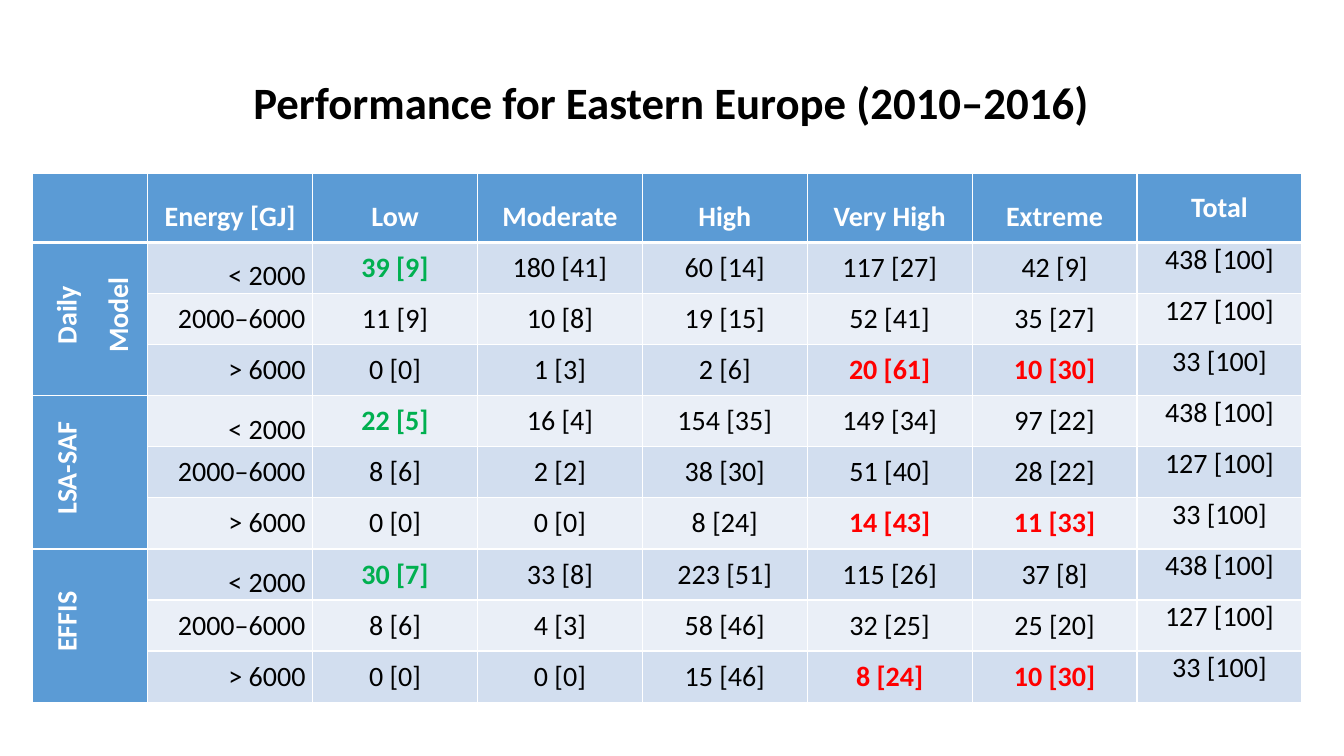
from lxml.etree import SubElement
from pptx import Presentation
from pptx.dml.color import RGBColor
from pptx.enum.text import MSO_ANCHOR, PP_ALIGN
from pptx.oxml.ns import qn
from pptx.util import Pt

THEME = {
    "font": "Calibri",
    "title_size": 32,
    "table_size": 20,
    "text": "000000",
    "border": "FFFFFF",
    "header_text": "FFFFFF",
    "header_fill": "5B9BD5",
    "bands": ("D2DEEF", "EAEFF7"),
    "good": "00B050",
    "alert": "FF0000",
}

HEADERS = ["Energy [GJ]", "Low", "Moderate", "High", "Very High", "Extreme", "Total"]
ENERGY_CLASSES = ["< 2000", "2000–6000", "> 6000"]
TOTALS = ["438 [100]", "127 [100]", "33 [100]"]
MODELS = {
    "Daily Model": [
        ["39 [9]", "180 [41]", "60 [14]", "117 [27]", "42 [9]"],
        ["11 [9]", "10 [8]", "19 [15]", "52 [41]", "35 [27]"],
        ["0 [0]", "1 [3]", "2 [6]", "20 [61]", "10 [30]"],
    ],
    "LSA-SAF": [
        ["22 [5]", "16 [4]", "154 [35]", "149 [34]", "97 [22]"],
        ["8 [6]", "2 [2]", "38 [30]", "51 [40]", "28 [22]"],
        ["0 [0]", "0 [0]", "8 [24]", "14 [43]", "11 [33]"],
    ],
    "EFFIS": [
        ["30 [7]", "33 [8]", "223 [51]", "115 [26]", "37 [8]"],
        ["8 [6]", "4 [3]", "58 [46]", "32 [25]", "25 [20]"],
        ["0 [0]", "0 [0]", "15 [46]", "8 [24]", "10 [30]"],
    ],
}
HIGHLIGHTS = {(0, 2): "good", (2, 5): "alert", (2, 6): "alert"}


def write(paragraph, text, size, color, bold, alignment=PP_ALIGN.CENTER):
    paragraph.alignment = alignment
    run = paragraph.add_run()
    run.text = text
    font_format = {"name": THEME["font"], "size": Pt(size), "bold": bold}
    for attribute, value in font_format.items():
        setattr(run.font, attribute, value)
    run.font.color.rgb = RGBColor.from_string(color)


def style_cell(cell, fill, anchor, bottom_width=1):
    cell_format = {
        "margin_left": Pt(5),
        "margin_right": Pt(5),
        "margin_top": Pt(0),
        "margin_bottom": Pt(0),
        "vertical_anchor": anchor,
    }
    for attribute, value in cell_format.items():
        setattr(cell, attribute, value)
    properties = cell._tc.get_or_add_tcPr()
    for side, width in {"L": 1, "R": 1, "T": 1, "B": bottom_width}.items():
        line = SubElement(properties, qn(f"a:ln{side}"), w=str(Pt(width)))
        solid = SubElement(line, qn("a:solidFill"))
        SubElement(solid, qn("a:srgbClr"), val=THEME["border"])
    cell.fill.solid()
    cell.fill.fore_color.rgb = RGBColor.from_string(fill)


presentation = Presentation()
presentation.slide_width = Pt(960)
presentation.slide_height = Pt(540)
slide = presentation.slides.add_slide(presentation.slide_layouts[6])

table_shape = slide.shapes.add_table(10, 8, Pt(23.4), Pt(124.2), Pt(906.7), Pt(377.5))
table = table_shape.table
table.horz_banding = False
for index, column in enumerate(table.columns):
    column.width = Pt(117.8 if index else 82.1)
for index, row in enumerate(table.rows):
    row.height = Pt(36.5 if index else 49)

style_cell(table.cell(0, 0), THEME["header_fill"], MSO_ANCHOR.TOP, 3)
for column_index, header in enumerate(HEADERS, 1):
    cell = table.cell(0, column_index)
    anchor = MSO_ANCHOR.TOP if header == "Total" else MSO_ANCHOR.MIDDLE
    style_cell(cell, THEME["header_fill"], anchor, 3)
    paragraph = cell.text_frame.paragraphs[0]
    paragraph.line_spacing = 1.5
    write(paragraph, header, THEME["table_size"], THEME["header_text"], True)

for model_index, (model, results) in enumerate(MODELS.items()):
    first_row = 1 + model_index * len(ENERGY_CLASSES)
    model_cell = table.cell(first_row, 0)
    model_cell.merge(table.cell(first_row + 2, 0))
    for offset, (energy, values, total) in enumerate(zip(ENERGY_CLASSES, results, TOTALS)):
        row_index = first_row + offset
        style_cell(table.cell(row_index, 0), THEME["header_fill"], MSO_ANCHOR.MIDDLE)
        for column_index, text in enumerate([energy, *values, total], 1):
            cell = table.cell(row_index, column_index)
            anchor = MSO_ANCHOR.MIDDLE
            if column_index == 7:
                anchor = MSO_ANCHOR.TOP
            elif column_index == 1 and offset == 0:
                anchor = MSO_ANCHOR.BOTTOM
            style_cell(cell, THEME["bands"][(row_index - 1) % 2], anchor)
            highlight = HIGHLIGHTS.get((offset, column_index))
            write(
                cell.text_frame.paragraphs[0],
                text,
                THEME["table_size"],
                THEME[highlight or "text"],
                highlight is not None,
                PP_ALIGN.RIGHT if column_index == 1 else PP_ALIGN.CENTER,
            )
    model_cell._tc.get_or_add_tcPr().set("vert", "vert270")
    paragraph = model_cell.text_frame.paragraphs[0]
    paragraph.line_spacing = 1.5
    paragraph._p.get_or_add_pPr().set("marL", str(Pt(5.65)))
    write(paragraph, model, THEME["table_size"], THEME["header_text"], True)

title = slide.shapes.add_textbox(Pt(152), Pt(49.7), Pt(662.4), Pt(46))
title.text_frame.word_wrap = True
write(
    title.text_frame.paragraphs[0],
    "Performance for Eastern Europe (2010–2016) ",
    THEME["title_size"],
    THEME["text"],
    True,
)

presentation.save("out.pptx")
